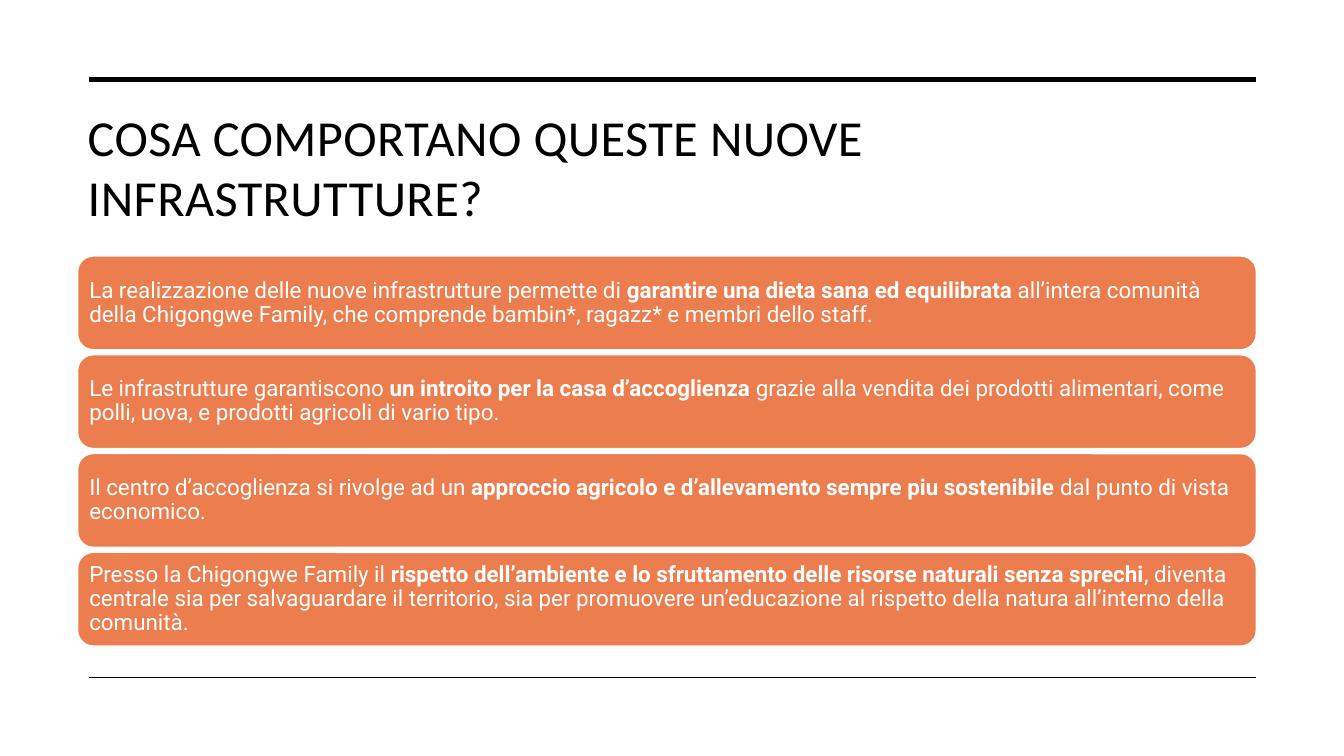
import pptx
import pptx.dml.color
import pptx.enum.shapes
import pptx.enum.text
import pptx.util
from pptx.util import Inches

COLOURS = {"ink": "000000", "card": "EB7D4E", "paper": "FFFFFF"}
TITLE = "COSA COMPORTANO QUESTE NUOVE INFRASTRUTTURE?"
# Each card reads: plain opening, bold key phrase, plain ending.
CARDS = [
    ("La realizzazione delle nuove infrastrutture permette di ",
     "garantire una dieta sana ed equilibrata ",
     "all’intera comunità della Chigongwe Family, che comprende bambin*, ragazz* e membri dello staff."),
    ("Le infrastrutture garantiscono ",
     "un introito per la casa d’accoglienza ",
     "grazie alla vendita dei prodotti alimentari, come polli, uova, e prodotti agricoli di vario tipo."),
    ("Il centro d’accoglienza si rivolge ad un ",
     "approccio agricolo e d’allevamento sempre piu sostenibile",
     " dal punto di vista economico."),
    ("Presso la Chigongwe Family il ",
     "rispetto dell’ambiente e lo sfruttamento delle risorse naturali senza sprechi",
     ", diventa centrale sia per salvaguardare il territorio, sia per promuovere un’educazione "
     "al rispetto della natura all’interno della comunità."),
]
LEFT, WIDTH = 0.77, 11.69
CARD_TOP, CARD_HEIGHT, CARD_STEP = 2.54, 0.93, 0.98


def colour(name):
    return pptx.dml.color.RGBColor.from_string(COLOURS[name])


def apply(target, values):
    for name, value in values.items():
        setattr(target, name, value)


class SlideBuilder:
    title_font = {"name": "Calibri", "size": pptx.util.Pt(36), "bold": False}
    card_font = {"name": "Roboto", "size": pptx.util.Pt(16)}
    title_frame = {
        "word_wrap": True,
        "auto_size": pptx.enum.text.MSO_AUTO_SIZE.NONE,
        "vertical_anchor": pptx.enum.text.MSO_ANCHOR.TOP,
    }
    card_frame = {
        "word_wrap": True,
        "vertical_anchor": pptx.enum.text.MSO_ANCHOR.MIDDLE,
        **{f"margin_{side}": Inches(0.07) for side in ("left", "top", "right", "bottom")},
    }

    def __init__(self, slide):
        self.slide = slide

    def rule(self, top, weight):
        line = self.slide.shapes.add_connector(
            pptx.enum.shapes.MSO_CONNECTOR.STRAIGHT,
            Inches(0.88), Inches(top), Inches(12.46), Inches(top))
        line.line.color.rgb = colour("ink")
        line.line.width = pptx.util.Pt(weight)
        line._element.spPr.append(pptx.oxml.parse_xml(
            '<a:effectLst xmlns:a="http://schemas.openxmlformats.org/drawingml/2006/main"/>'))

    def title(self, text):
        shape = self.slide.shapes.title
        apply(shape, {"left": Inches(LEFT), "top": Inches(1),
                      "width": Inches(WIDTH), "height": Inches(1.43)})
        apply(shape.text_frame, self.title_frame)
        paragraph = shape.text_frame.paragraphs[0]
        apply(paragraph, {"alignment": pptx.enum.text.PP_ALIGN.LEFT, "line_spacing": 1.0})
        run = paragraph.add_run()
        run.text = text
        apply(run.font, self.title_font)
        run.font.color.rgb = colour("ink")
        run.font._element.set("spc", "30")

    def card(self, top, parts):
        shape = self.slide.shapes.add_shape(
            pptx.enum.shapes.MSO_SHAPE.ROUNDED_RECTANGLE,
            Inches(LEFT), Inches(top), Inches(WIDTH), Inches(CARD_HEIGHT))
        shape.shadow.inherit = False
        shape.fill.solid()
        shape.fill.fore_color.rgb = colour("card")
        shape.line.color.rgb = colour("paper")
        shape.line.width = pptx.util.Pt(1)
        apply(shape.text_frame, self.card_frame)
        paragraph = shape.text_frame.paragraphs[0]
        apply(paragraph, {"alignment": pptx.enum.text.PP_ALIGN.LEFT, "line_spacing": 0.9})
        for text, bold in zip(parts, (False, True, False)):
            run = paragraph.add_run()
            run.text = text
            apply(run.font, {**self.card_font, "bold": bold})
            run.font.color.rgb = colour("paper")


def main():
    presentation = pptx.Presentation()
    presentation.slide_width = Inches(13.33)
    presentation.slide_height = Inches(7.5)
    title_only = presentation.slide_layouts[5]
    builder = SlideBuilder(presentation.slides.add_slide(title_only))
    builder.rule(0.79, 3.5)
    builder.rule(6.72, 1)
    builder.title(TITLE)
    for index, parts in enumerate(CARDS):
        builder.card(CARD_TOP + index * CARD_STEP, parts)
    presentation.save("out.pptx")


if __name__ == "__main__":
    main()
